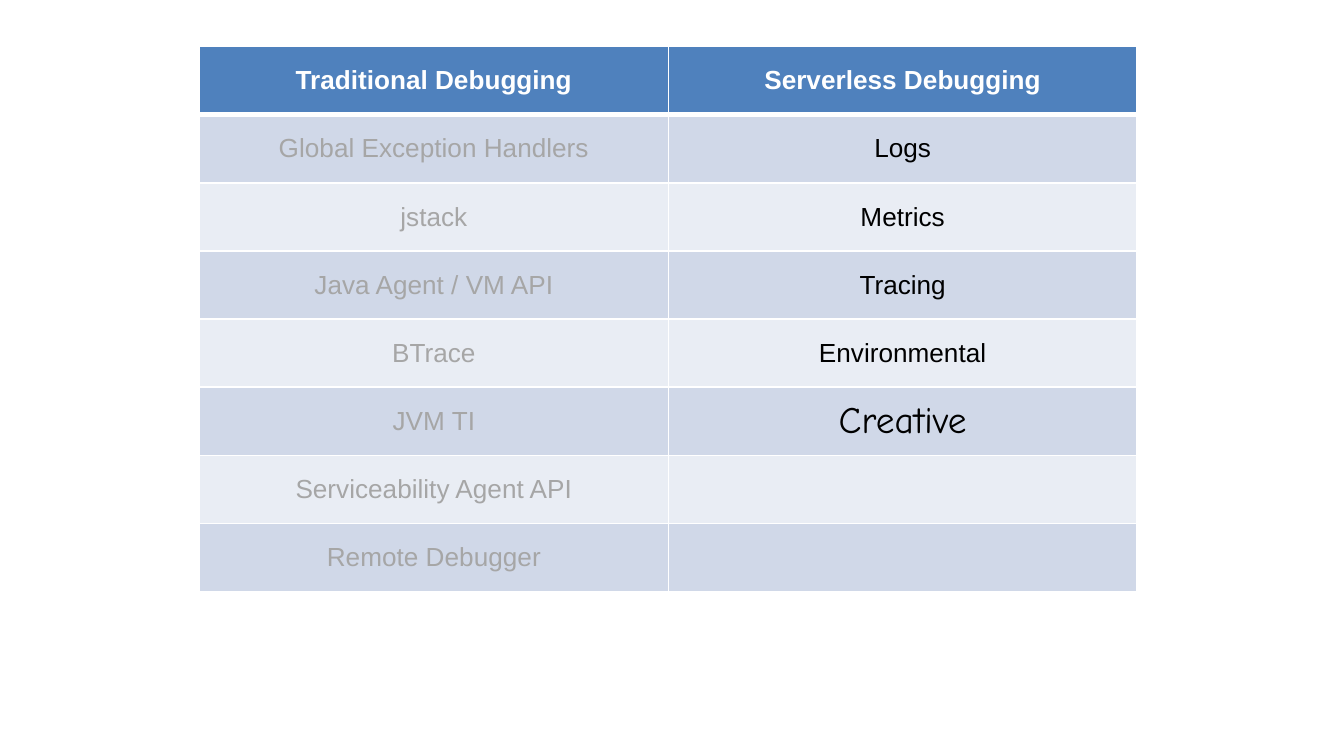
import pptx
import pptx.dml.color
import pptx.enum.text
import pptx.util
from lxml import etree
from pptx.oxml.ns import qn

Cm, Pt = pptx.util.Cm, pptx.util.Pt

COLORS = {
    "white": "FFFFFF",
    "header": "4F81BD",
    "band_dark": "D0D8E8",
    "band_light": "E9EDF4",
    "muted": "A6A6A6",
    "black": "000000",
}

HEADERS = ("Traditional Debugging", "Serverless Debugging")
ROWS = [
    ("Global Exception Handlers", "Logs"),
    ("jstack", "Metrics"),
    ("Java Agent / VM API", "Tracing"),
    ("BTrace", "Environmental"),
    ("JVM TI", "Creative"),
    ("Serviceability Agent API", ""),
    ("Remote Debugger", ""),
]


def rgb(name):
    return pptx.dml.color.RGBColor.from_string(COLORS[name])


def set_borders(cell, **widths):
    """Draw white borders; 1 pt unless a width is given for a side."""
    tcPr = cell._tc.get_or_add_tcPr()
    for side in ("L", "R", "T", "B"):
        width = Pt(widths.get(side, 1))
        ln = etree.SubElement(tcPr, qn(f"a:ln{side}"), w=str(width))
        fill = etree.SubElement(ln, qn("a:solidFill"))
        etree.SubElement(fill, qn("a:srgbClr"), val=COLORS["white"])


def fill_cell(cell, text, fill, color, font="Arial", size=14, bold=False):
    cell.fill.solid()
    cell.fill.fore_color.rgb = rgb(fill)
    cell.vertical_anchor = pptx.enum.text.MSO_ANCHOR.MIDDLE
    cell.margin_left = cell.margin_right = Cm(0.27)
    cell.margin_top = cell.margin_bottom = Cm(0.13)
    p = cell.text_frame.paragraphs[0]
    p.alignment = pptx.enum.text.PP_ALIGN.CENTER
    if text:
        r = p.add_run()
        r.text = text
        r.font.name, r.font.size, r.font.bold = font, Pt(size), bold
        r.font.color.rgb = rgb(color)


def add_debugging_table(slide, left, top, width, height):
    n_rows, n_cols = len(ROWS) + 1, len(HEADERS)
    table = slide.shapes.add_table(n_rows, n_cols, left, top, width, height).table
    for column in table.columns:
        column.width = int(width / n_cols)
    for row in table.rows:
        row.height = int(height / n_rows)

    # Header row, with a thick rule below it
    for c, text in enumerate(HEADERS):
        cell = table.cell(0, c)
        set_borders(cell, B=3)
        fill_cell(cell, text, "header", "white", bold=True)

    # Banded body rows: muted old tools, black new ones
    for i, texts in enumerate(ROWS):
        band = "band_light" if i % 2 else "band_dark"
        for c, text in enumerate(texts):
            cell = table.cell(i + 1, c)
            set_borders(cell, T=1 if i else 3)
            style = {"font": "Comic Neue", "size": 20} if text == "Creative" else {}
            fill_cell(cell, text, band, "black" if c else "muted", **style)


def main():
    prs = pptx.Presentation()
    prs.slide_width, prs.slide_height = Cm(25.4), Cm(14.29)
    slide = prs.slides.add_slide(prs.slide_layouts[6])
    add_debugging_table(slide, Cm(3.77), Cm(0.88), Cm(17.72), Cm(10.31))
    prs.save("out.pptx")


if __name__ == "__main__":
    main()
